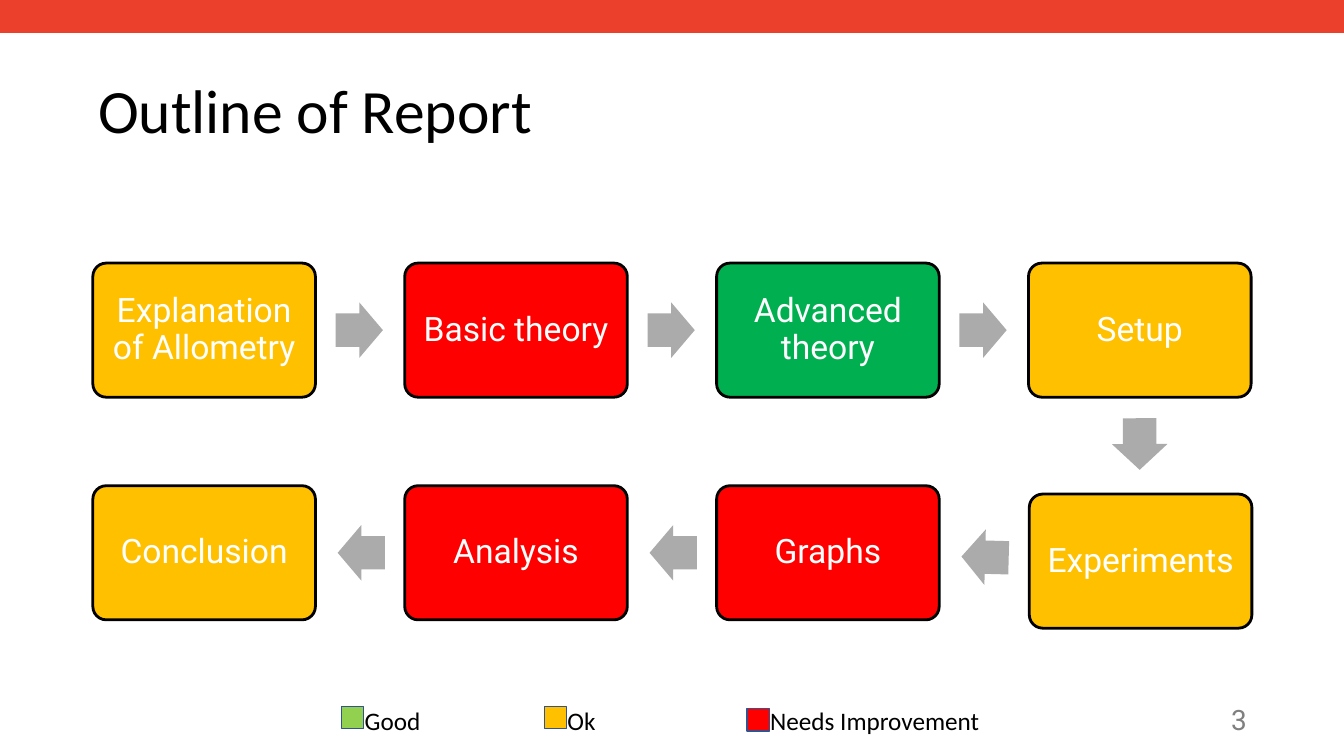
"""Build the report outline slide: a status-coloured flow of eight sections."""
from dataclasses import dataclass

from lxml import etree
from pptx import Presentation
from pptx.dml.color import RGBColor
from pptx.enum import shapes, text
from pptx.oxml.ns import qn
from pptx.util import Cm, Pt

COLORS = {
    "band": "EA402C", "black": "000000", "white": "FFFFFF", "grey": "808080",
    "arrow": "ABABAB", "swatch_line": "32538F", "advanced": "00B050",
    "good": "92D050", "ok": "FFC000", "poor": "FF0000",
}
CARD_W, CARD_H, PITCH, LEFT = 5.61, 3.38, 7.86, 2.34
TOP_ROW, BOTTOM_ROW = 6.63, 12.24
ARROW_H, SWATCH = 1.4, 0.56


@dataclass
class Card:
    """A section of the report."""
    label: str
    color: str
    x: float
    y: float


@dataclass
class Arrow:
    """A block arrow between two sections."""
    x: float
    y: float
    rotation: float = 0
    width: float = 1.19


@dataclass
class Key:
    """A legend entry."""
    label: str
    color: str
    x: float
    y: float
    width: float


CARDS = [
    Card("Explanation of Allometry", "ok", LEFT, TOP_ROW),
    Card("Basic theory", "poor", LEFT + PITCH, TOP_ROW),
    Card("Advanced theory", "advanced", LEFT + 2 * PITCH, TOP_ROW),
    Card("Setup", "ok", LEFT + 3 * PITCH, TOP_ROW),
    Card("Experiments", "ok", 25.94, 12.45),
    Card("Graphs", "poor", LEFT + 2 * PITCH, BOTTOM_ROW),
    Card("Analysis", "poor", LEFT + PITCH, BOTTOM_ROW),
    Card("Conclusion", "ok", LEFT, BOTTOM_ROW),
]
ARROWS = [
    *(Arrow(8.46 + i * PITCH, 7.62) for i in range(3)),
    Arrow(28.07, 10.49, 89.9, 1.3),
    Arrow(8.51 + 2 * PITCH, 13.34, 181.5),
    *(Arrow(8.51 + i * PITCH, 13.23, 180) for i in (1, 0)),
]
KEYS = [
    Key("Good", "good", 8.61, 17.8, 2),
    Key("Ok", "ok", 13.72, 17.8, 1.5),
    Key("Needs Improvement", "poor", 18.83, 17.86, 6),
]


def rgb(name: str) -> RGBColor:
    """Look up a named colour."""
    return RGBColor.from_string(COLORS[name])


def write(tf, content: str, font: str, size: int, color: str,
          align=text.PP_ALIGN.LEFT, spacing: float = 1.0) -> None:
    """Fill a text frame with one formatted paragraph."""
    tf.text = content
    p = tf.paragraphs[0]
    p.alignment, p.line_spacing = align, spacing
    r = p.runs[0]
    r.font.name, r.font.size = font, Pt(size)
    r.font.color.rgb = rgb(color)


def set_margins(tf, margin: float) -> None:
    """Give a text frame the same margin on every side."""
    tf.margin_left = tf.margin_right = tf.margin_top = tf.margin_bottom = Cm(margin)


def add_block(s, kind, box: tuple, fill: str, line: str = "", width: float = 1):
    """Add a flat filled shape, outlined if a line colour is given."""
    sp = s.shapes.add_shape(kind, *map(Cm, box))
    sp.shadow.inherit = False
    sp.fill.solid()
    sp.fill.fore_color.rgb = rgb(fill)
    if line:
        sp.line.color.rgb = rgb(line)
        sp.line.width = Pt(width)
    else:
        sp.line.fill.background()
    return sp


def add_card(s, card: Card) -> None:
    """Draw one section card."""
    sp = add_block(s, shapes.MSO_SHAPE.ROUNDED_RECTANGLE,
                   (card.x, card.y, CARD_W, CARD_H), card.color, "black", 2)
    sp.adjustments[0] = 0.1
    tf = sp.text_frame
    tf.word_wrap = True
    tf.vertical_anchor = text.MSO_ANCHOR.MIDDLE
    set_margins(tf, 0.25)
    write(tf, card.label, "Roboto", 24, "white", text.PP_ALIGN.CENTER, 0.9)


def add_arrow(s, arrow: Arrow) -> None:
    """Draw one block arrow."""
    sp = add_block(s, shapes.MSO_SHAPE.RIGHT_ARROW,
                   (arrow.x, arrow.y, arrow.width, ARROW_H), "arrow")
    sp.adjustments[0], sp.adjustments[1] = 0.6, 0.5
    sp.rotation = arrow.rotation


def add_key(s, key: Key) -> None:
    """Draw a legend swatch and its label."""
    add_block(s, shapes.MSO_SHAPE.RECTANGLE,
              (key.x, key.y, SWATCH, SWATCH), key.color, "swatch_line")
    sp = s.shapes.add_textbox(Cm(key.x + SWATCH + 0.02), Cm(17.65), Cm(key.width), Cm(1))
    tf = sp.text_frame
    set_margins(tf, 0.13)
    tf.margin_left = tf.margin_right = 0
    tf.word_wrap = True
    write(tf, key.label, "Calibri", 18, "black")


def add_band(s) -> None:
    """Draw the thick line along the top edge."""
    band = s.shapes.add_connector(shapes.MSO_CONNECTOR.STRAIGHT,
                                  0, Cm(0.41), Cm(33.87), Cm(0.41))
    band.line.color.rgb = rgb("band")
    band.line.width = Pt(24)
    etree.SubElement(band._element.spPr, qn("a:effectLst"))


def add_title(s) -> None:
    """Place and format the title."""
    title = s.shapes.title
    title.left, title.top, title.width, title.height = map(Cm, (2.34, 1.02, 27.48, 3.68))
    tf = title.text_frame
    tf.auto_size = text.MSO_AUTO_SIZE.NONE
    tf.vertical_anchor = text.MSO_ANCHOR.MIDDLE
    set_margins(tf, 0.13)
    write(tf, "Outline of Report", "Calibri", 44, "black", spacing=0.9)


def add_number(s) -> None:
    """Place the slide number."""
    sp = s.shapes.add_textbox(Cm(30.55), Cm(17.58), Cm(1), Cm(1.07))
    tf = sp.text_frame
    tf.word_wrap = True
    tf.vertical_anchor = text.MSO_ANCHOR.MIDDLE
    set_margins(tf, 0.13)
    write(tf, "3", "Roboto", 20, "grey", text.PP_ALIGN.RIGHT)


def main() -> None:
    """Assemble and save the slide."""
    prs = Presentation()
    prs.slide_width, prs.slide_height = Cm(33.87), Cm(19.05)
    s = prs.slides.add_slide(prs.slide_layouts[5])
    add_band(s)
    add_title(s)
    for key in KEYS:
        add_key(s, key)
    add_number(s)
    for card in CARDS:
        add_card(s, card)
    for arrow in ARROWS:
        add_arrow(s, arrow)
    prs.save("out.pptx")


if __name__ == "__main__":
    main()
